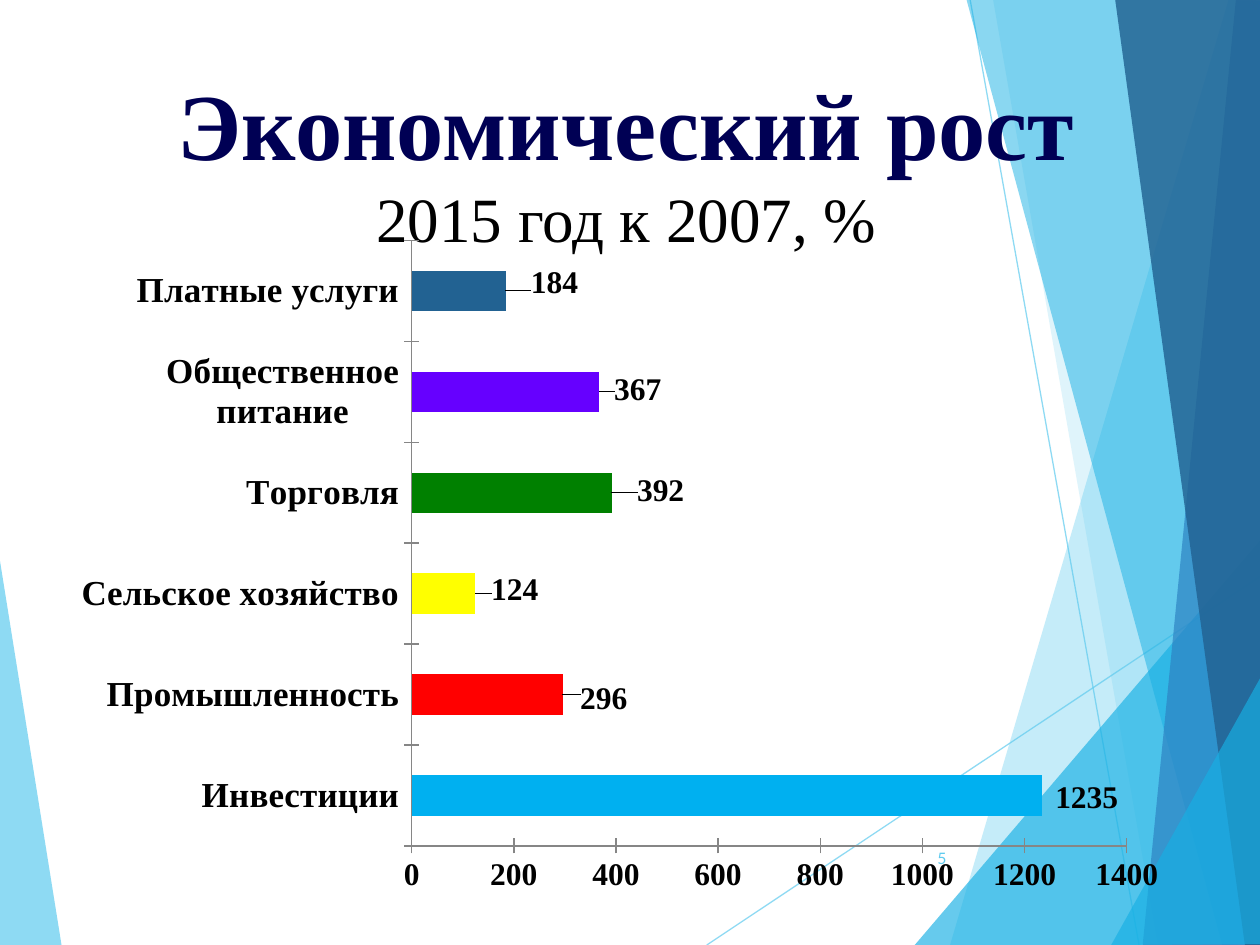
"""Build the economic growth slide with a horizontal bar chart."""
from dataclasses import dataclass

from lxml import etree
from pptx import Presentation
from pptx.chart.data import CategoryChartData
from pptx.dml.color import RGBColor
from pptx.enum.chart import XL_CHART_TYPE, XL_LABEL_POSITION, XL_TICK_MARK
from pptx.enum.shapes import MSO_CONNECTOR
from pptx.enum.text import MSO_ANCHOR, PP_ALIGN
from pptx.oxml.ns import qn
from pptx.util import Pt

BAR = XL_CHART_TYPE.BAR_CLUSTERED
OUTSIDE = XL_LABEL_POSITION.OUTSIDE_END
CROSS = XL_TICK_MARK.CROSS
STRAIGHT = MSO_CONNECTOR.STRAIGHT
TOP, MIDDLE = MSO_ANCHOR.TOP, MSO_ANCHOR.MIDDLE
CENTER, RIGHT = PP_ALIGN.CENTER, PP_ALIGN.RIGHT


@dataclass(frozen=True)
class Theme:
    serif: str = "Times New Roman"
    sans: str = "Lato"
    sky: str = "5FCBEF"
    cyan: str = "17B0E4"
    blue: str = "2E83C3"
    deep: str = "226292"
    navy: str = "000054"
    black: str = "000000"
    axis: str = "868686"
    title: int = 54
    subtitle: int = 36
    category: int = 20
    value: int = 18
    number: int = 9


THEME = Theme()


def style(font, size, color, name=THEME.serif, bold=False):
    font.size, font.name, font.bold = Pt(size), name, bold
    font.color.rgb = RGBColor.from_string(color)


def add_layout(parent, index, **values):
    layout = etree.Element(qn("c:layout"))
    manual = etree.SubElement(layout, qn("c:manualLayout"))
    for key, value in values.items():
        etree.SubElement(manual, qn(f"c:{key}")).set("val", str(value))
    parent.insert(index, layout)


deck = Presentation()
deck.slide_width, deck.slide_height = Pt(720), Pt(540)
page = deck.slides.add_slide(deck.slide_layouts[6])

rays = [((403.9, 540), (720.7, 329)), ((554.4, 0), (650.9, 540))]
facets = [
    (THEME.sky, 70, [(-0.7, 316), (35.3, 540.7), (-0.7, 540)]),
    (THEME.sky, 36, [(702, 0), (542.9, 540), (721.4, 540.7), (720.7, 0.7)]),
    (THEME.sky, 20, [(567.4, -0.7), (661.7, 540), (720.7, 540), (720.7, -0.7)]),
    (THEME.cyan, 66, [(522.7, 540), (720, 308.9), (720.7, 540)]),
    (THEME.cyan, 50, [(552.2, -0.7), (698.4, 540), (720.7, 539.3), (720.7, -0.7)]),
    (THEME.blue, 70, [(706.3, -0.7), (653, 540), (720.7, 540), (720, -0.7)]),
    (THEME.deep, 82, [(637.2, -0.7), (711.4, 540), (721.4, 540), (720, -0.7)]),
    (THEME.cyan, 66, [(635, 540), (721.4, 385.2), (721.4, 539.3)]),
]
for order, (color, opacity, corners) in enumerate(facets):
    if order == 1:
        for start, end in rays:
            ray = page.shapes.add_connector(STRAIGHT, *map(Pt, start + end))
            ray.line.width = Pt(0.75)
            ray.line.color.rgb = RGBColor.from_string(THEME.sky)
            tint = next(ray.element.iter(qn("a:srgbClr")))
            etree.SubElement(tint, qn("a:alpha")).set("val", "70000")
            etree.SubElement(ray.element.spPr, qn("a:effectLst"))
    points = [(Pt(x), Pt(y)) for x, y in corners]
    outline = page.shapes.build_freeform(*points[0])
    outline.add_line_segments(points[1:], close=True)
    facet = outline.convert_to_shape()
    facet.shadow.inherit = False
    facet.line.fill.background()
    facet.fill.solid()
    facet.fill.fore_color.rgb = RGBColor.from_string(color)
    tint = next(facet.element.spPr.iter(qn("a:srgbClr")))
    etree.SubElement(tint, qn("a:alpha")).set("val", str(opacity * 1000))

heading = page.shapes.add_textbox(Pt(33.84), Pt(28), Pt(648), Pt(90)).text_frame
heading.word_wrap = True
heading.vertical_anchor = TOP
heading.margin_top = Pt(9.5)
para = heading.paragraphs[0]
para.alignment = CENTER
span = para.add_run()
span.text = "Экономический рост"
style(span.font, THEME.title, THEME.navy, bold=True)
para.add_line_break()
span = para.add_run()
span.text = "2015 год к 2007, %"
style(span.font, THEME.subtitle, THEME.black)

number = page.shapes.add_textbox(Pt(507.6), Pt(475.9), Pt(40.3), Pt(28.8)).text_frame
number.word_wrap = True
number.vertical_anchor = MIDDLE
para = number.paragraphs[0]
para.text = "5"
para.alignment = RIGHT
style(para.font, THEME.number, THEME.sky, THEME.sans)

bars = [
    ("Инвестиции", 1235, "00B0F0", 0.007, 0.003),
    ("Промышленность", 296, "FF0000", 0.011, 0.006),
    ("Сельское хозяйство", 124, "FFFF00", 0.01, -0.006),
    ("Торговля", 392, "008000", 0.018, -0.003),
    ("Общественное питание", 367, "6600FF", 0.009, -0.003),
    ("Платные услуги", 184, THEME.deep, 0.018, -0.012),
]
data = CategoryChartData()
data.categories = [bar[0] for bar in bars]
data.add_series("Series 1", [bar[1] for bar in bars])
frame = page.shapes.add_chart(BAR, Pt(33.84), Pt(129.6), Pt(641.5), Pt(388), data)
chart = frame.chart
chart.has_legend = chart.has_title = False
style(chart.font, THEME.value, THEME.black, THEME.sans)
plot = chart.plots[0]
plot.gap_width = 150
plot.vary_by_categories = False

for axis, size in ((chart.category_axis, THEME.category), (chart.value_axis, THEME.value)):
    axis.has_major_gridlines = False
    axis.major_tick_mark = CROSS
    axis.format.line.color.rgb = RGBColor.from_string(THEME.axis)
    style(axis.tick_labels.font, size, THEME.black, bold=True)
chart.value_axis.minimum_scale = 0
chart.value_axis.maximum_scale = 1400
chart.value_axis.major_unit = 200

series = plot.series[0]
series.format.fill.solid()
series.format.fill.fore_color.rgb = RGBColor.from_string(THEME.sky)
series.data_labels.show_value = True
style(series.data_labels.font, THEME.value, THEME.black, bold=True)
for index, (_, _, color, _, _) in enumerate(bars):
    point = series.points[index]
    point.format.fill.solid()
    point.format.fill.fore_color.rgb = RGBColor.from_string(color)
    style(point.data_label.font, THEME.value, THEME.black, bold=True)
    point.data_label.position = OUTSIDE

for label, (_, _, _, shift_x, shift_y) in zip(chart.element.iter(qn("c:dLbl")), bars):
    add_layout(label, 1, x=shift_x, y=shift_y)
area = next(chart.element.iter(qn("c:plotArea")))
for layout in area.findall(qn("c:layout")):
    area.remove(layout)
add_layout(area, 0, layoutTarget="inner", xMode="edge", yMode="edge",
           x=0.314, y=0.02, w=0.637, h=0.892)

deck.save("out.pptx")
